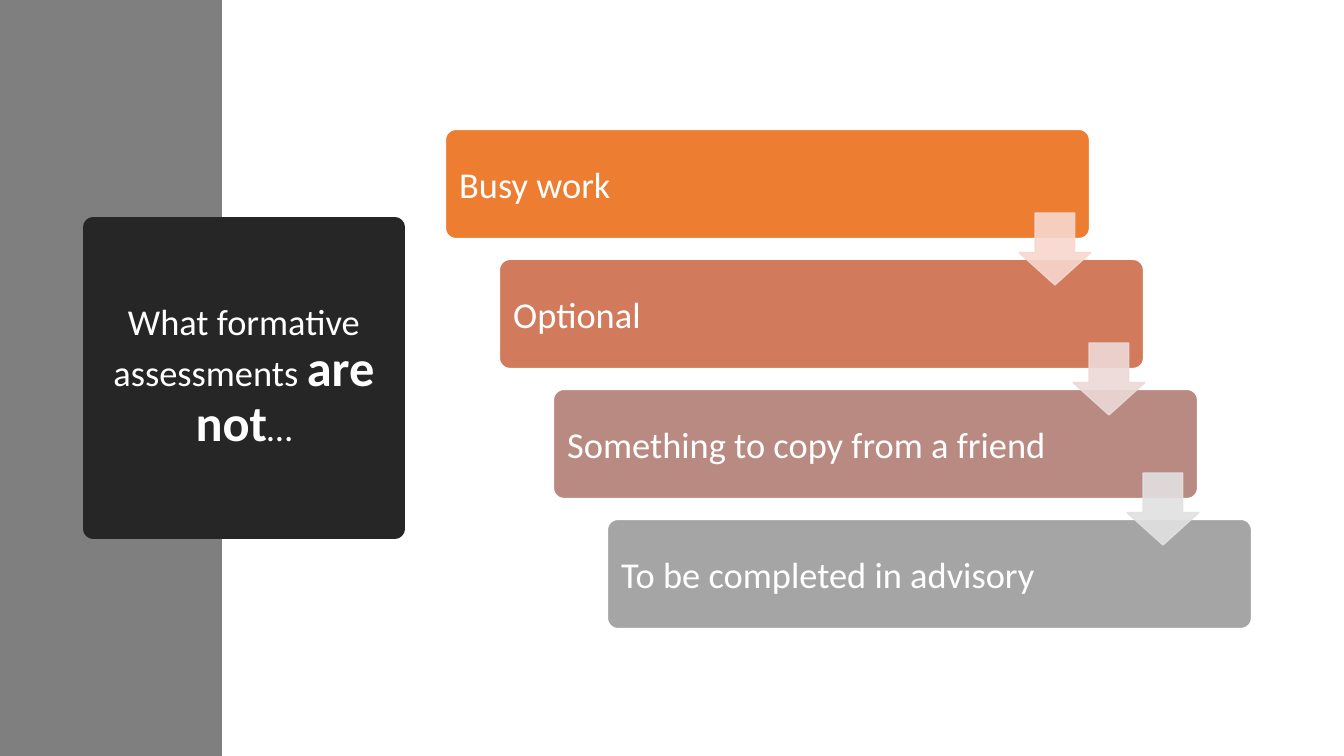
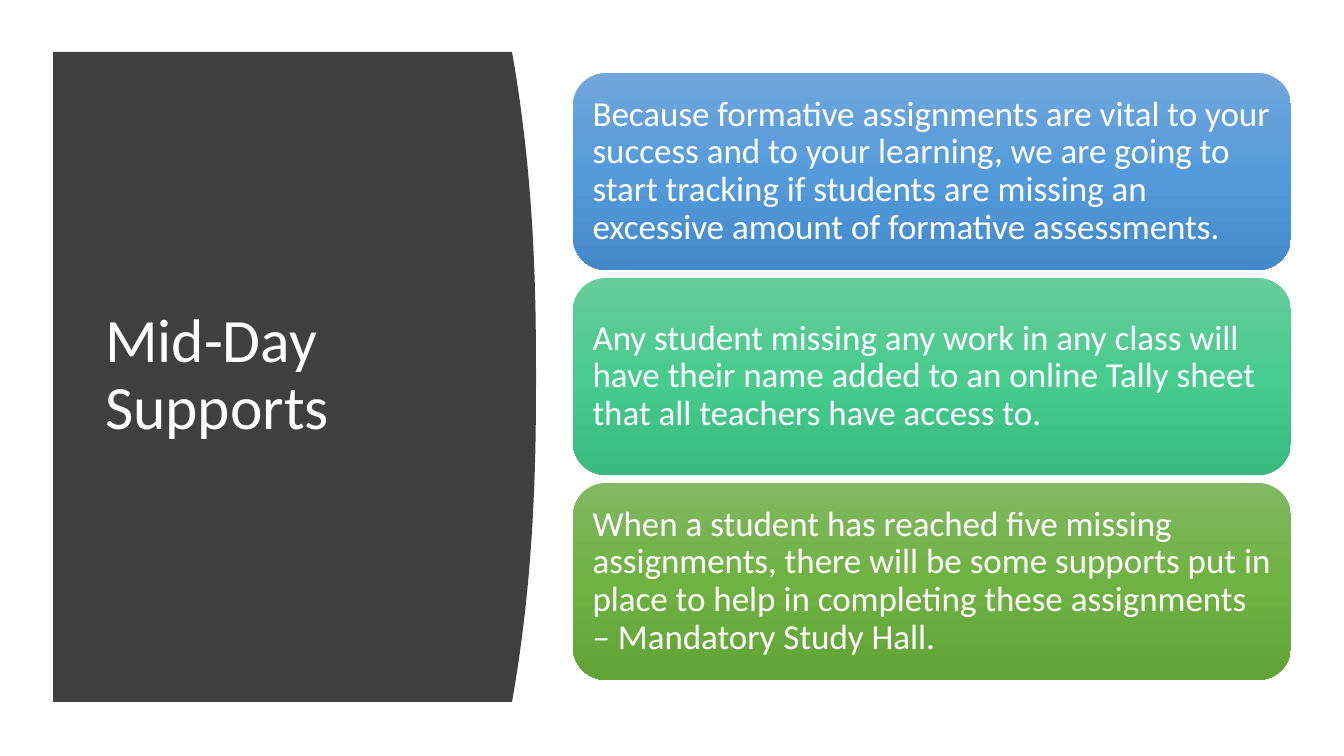
"""Build two slides on formative assessments and mid-day supports."""
from copy import deepcopy
from dataclasses import dataclass

from lxml.etree import SubElement
from pptx import Presentation
from pptx.dml.color import RGBColor
from pptx.enum.shapes import MSO_SHAPE
from pptx.enum.text import MSO_ANCHOR, MSO_AUTO_SIZE, PP_ALIGN
from pptx.oxml.ns import qn
from pptx.util import Emu, Pt

PAGE_WIDTH, PAGE_HEIGHT = 1344, 756
EMU_PER_PX = 12192000 / PAGE_WIDTH
FONT = "Calibri"
WHITE = "FFFFFF"
BAND = "7F7F7F"
TITLE_BOX = "262626"
PANEL = "404040"
TITLE_ONLY = 5


@dataclass(frozen=True)
class Box:
    left: int
    top: int
    width: int
    height: int

    def shifted(self, right: int, down: int) -> "Box":
        return Box(self.left + right, self.top + down, self.width, self.height)


@dataclass(frozen=True)
class Span:
    text: str
    size: int
    bold: bool = False


@dataclass(frozen=True)
class Step:
    text: str
    color: str
    arrow: str | None = None


@dataclass(frozen=True)
class Card:
    text: str
    gradient: tuple[str, str, str]


STEPS = (
    Step("Busy work", "ED7D31", "F8D7CE"),
    Step("Optional", "D17B5C", "EDD9D7"),
    Step("Something to copy from a friend", "B98A82", "E1E1E1"),
    Step("To be completed in advisory", "A5A5A5"),
)
CARDS = (
    Card(
        "Because formative assignments are vital to your success and to your "
        "learning, we are going to start tracking if students are missing an "
        "excessive amount of formative assessments.",
        ("71A6DB", "559BDB", "448ACA"),
    ),
    Card(
        "Any student missing any work in any class will have their name added "
        "to an online Tally sheet that all teachers have access to.",
        ("67CC9A", "47CB8E", "39BB7F"),
    ),
    Card(
        "When a student has reached five missing assignments, there will be "
        "some supports put in place to help in completing these assignments "
        "– Mandatory Study Hall.",
        ("81B861", "6FB242", "62A336"),
    ),
)


def px(length: float) -> Emu:
    return Emu(round(length * EMU_PER_PX))


def rgb(value: str) -> RGBColor:
    return RGBColor.from_string(value)


def paint(shape, fill: str | None = None, line: str | None = None, weight: float = 1) -> None:
    if fill:
        shape.fill.solid()
        shape.fill.fore_color.rgb = rgb(fill)
    if line:
        shape.line.color.rgb = rgb(line)
        shape.line.width = Pt(weight)
    else:
        shape.line.fill.background()


def paint_gradient(shape, colors: tuple[str, str, str]) -> None:
    shape.fill.gradient()
    shape.fill.gradient_angle = 270
    stop_list = shape.element.spPr.find(".//" + qn("a:gsLst"))
    stop_list.append(deepcopy(stop_list[0]))
    for index, (stop, color) in enumerate(zip(shape.fill.gradient_stops, colors)):
        stop.position = index / (len(colors) - 1)
        stop.color.rgb = rgb(color)


def set_opacity(shape, percent: int) -> None:
    for color in shape.element.spPr.iter(qn("a:srgbClr")):
        SubElement(color, qn("a:alpha")).set("val", str(percent * 1000))


def add_preset(page, kind: MSO_SHAPE, box: Box, *adjustments: float):
    shape = page.shapes.add_shape(
        kind, px(box.left), px(box.top), px(box.width), px(box.height)
    )
    shape.shadow.inherit = False
    for index, value in enumerate(adjustments):
        shape.adjustments[index] = value
    return shape


def write_text(
    shape,
    *spans: Span,
    align: PP_ALIGN = PP_ALIGN.LEFT,
    inset: int = 10,
    spacing: float = 0.9,
) -> None:
    frame = shape.text_frame
    frame.word_wrap = True
    frame.auto_size = MSO_AUTO_SIZE.NONE
    frame.vertical_anchor = MSO_ANCHOR.MIDDLE
    frame.margin_left = frame.margin_right = px(inset)
    frame.margin_top = frame.margin_bottom = px(inset)
    para = frame.paragraphs[0]
    para.alignment = align
    para.line_spacing = spacing
    for span in spans:
        run = para.add_run()
        run.text = span.text
        run.font.name = FONT
        run.font.size = Pt(span.size)
        run.font.bold = span.bold
        run.font.color.rgb = rgb(WHITE)


def add_page(deck):
    return deck.slides.add_slide(deck.slide_layouts[TITLE_ONLY])


def place_title(page, box: Box, backdrop, *spans: Span, align: PP_ALIGN = PP_ALIGN.LEFT):
    title = page.shapes.title
    title.left, title.top = px(box.left), px(box.top)
    title.width, title.height = px(box.width), px(box.height)
    title.element.addprevious(backdrop.element)
    write_text(title, *spans, align=align)
    return title


def add_curved_panel(page):
    left, top, right, bottom, bulge = 53, 52, 512, 702, 24
    middle, half = (top + bottom) / 2, (bottom - top) / 2
    segments = 40
    edge = []
    for index in range(segments + 1):
        y = top + (bottom - top) * index / segments
        x = right + bulge * (1 - (abs(y - middle) / half) ** 2.4)
        edge.append((px(x), px(y)))
    outline = page.shapes.build_freeform(px(left), px(top), scale=1.0)
    outline.add_line_segments([*edge, (px(left), px(bottom))], close=True)
    panel = outline.convert_to_shape()
    panel.shadow.inherit = False
    paint(panel, PANEL)
    return panel


def build_steps_page(deck) -> None:
    page = add_page(deck)
    band = add_preset(page, MSO_SHAPE.RECTANGLE, Box(0, 0, 222, PAGE_HEIGHT))
    paint(band, BAND)
    title = place_title(
        page,
        Box(93, 227, 302, 302),
        band,
        Span("What formative assessments ", 26),
        Span("are not", 36, bold=True),
        Span("…", 26),
        align=PP_ALIGN.CENTER,
    )
    paint(title, TITLE_BOX, TITLE_BOX, 13.75)
    first_bar, first_arrow = Box(445, 129, 645, 110), Box(1019, 213, 72, 72)
    shifts = [(54 * index, 130 * index) for index in range(len(STEPS))]
    for step, shift in zip(STEPS, shifts):
        bar = add_preset(page, MSO_SHAPE.ROUNDED_RECTANGLE, first_bar.shifted(*shift), 0.1)
        paint(bar, step.color, WHITE, 1.5)
        write_text(bar, Span(step.text, 26), inset=11, spacing=1.0)
    for step, shift in zip(STEPS, shifts):
        if step.arrow:
            arrow = add_preset(
                page, MSO_SHAPE.DOWN_ARROW, first_arrow.shifted(*shift), 0.55, 0.45
            )
            paint(arrow, step.arrow, step.arrow)
            set_opacity(arrow, 90)


def build_supports_page(deck) -> None:
    page = add_page(deck)
    panel = add_curved_panel(page)
    place_title(page, Box(95, 112, 377, 528), panel, Span("Mid-Day Supports", 44))
    first_card = Box(573, 73, 718, 197)
    for index, card in enumerate(CARDS):
        shape = add_preset(
            page, MSO_SHAPE.ROUNDED_RECTANGLE, first_card.shifted(0, 205 * index)
        )
        paint_gradient(shape, card.gradient)
        paint(shape)
        write_text(shape, Span(card.text, 25))


def main() -> None:
    deck = Presentation()
    deck.slide_width, deck.slide_height = px(PAGE_WIDTH), px(PAGE_HEIGHT)
    build_steps_page(deck)
    build_supports_page(deck)
    deck.save("out.pptx")


if __name__ == "__main__":
    main()
